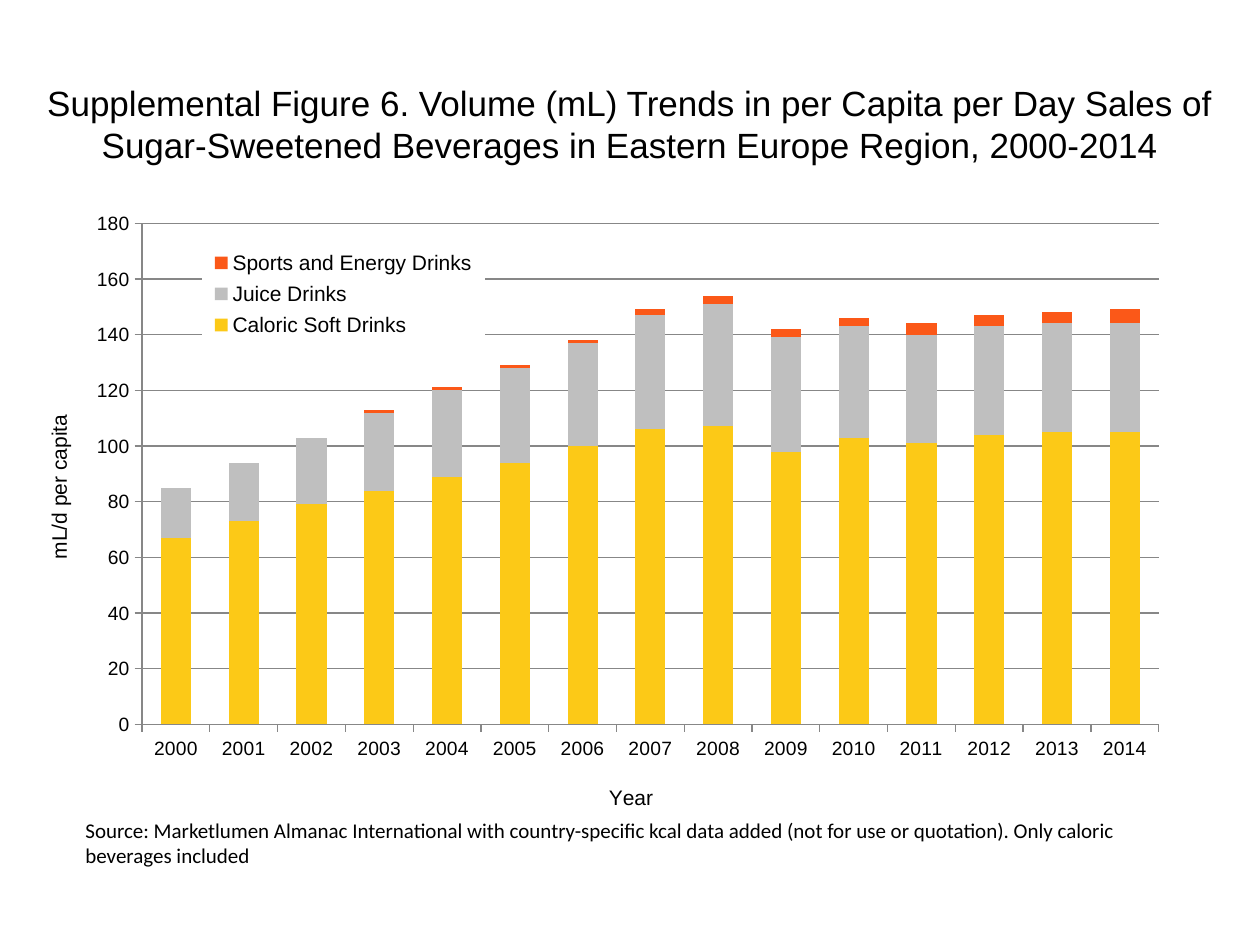
from lxml import etree
from pptx import Presentation
from pptx.chart.data import CategoryChartData
from pptx.dml.color import RGBColor
from pptx.enum.chart import XL_CHART_TYPE as ChartType
from pptx.enum.chart import XL_LEGEND_POSITION as LegendSpot
from pptx.enum.chart import XL_TICK_MARK as Tick
from pptx.enum.text import MSO_ANCHOR as Anchor
from pptx.enum.text import MSO_AUTO_SIZE as AutoSize
from pptx.enum.text import PP_ALIGN as Align
from pptx.oxml import parse_xml
from pptx.oxml.ns import nsdecls, qn
from pptx.util import Inches, Pt

WIDTH, HEIGHT = 10, 7.5
TITLE_ONLY = 5
GRAY = "878787"

YEARS = [str(year) for year in range(2000, 2015)]
SERIES = [
    ("Caloric Soft Drinks", "FCC917",
     [67, 73, 79, 84, 89, 94, 100, 106, 107, 98, 103, 101, 104, 105, 105]),
    ("Juice Drinks", "BFBFBF",
     [18, 21, 24, 28, 31, 34, 37, 41, 44, 41, 40, 39, 39, 39, 39]),
    ("Sports and Energy Drinks", "FB5818",
     [0, 0, 0, 1, 1, 1, 1, 2, 3, 3, 3, 4, 4, 4, 5]),
]


def color(hex_text):
    return RGBColor.from_string(hex_text)


def set_font(font, size, name="Arial", fill="000000"):
    font.size, font.name, font.bold = Pt(size), name, False
    font.color.rgb = color(fill)


def write(frame, text, size, name="Arial", align=None, anchor=None):
    """Put one formatted paragraph in a text frame."""
    frame.word_wrap = True
    if anchor is not None:
        frame.vertical_anchor = anchor
    para = frame.paragraphs[0]
    if align is not None:
        para.alignment = align
    span = para.add_run()
    span.text = text
    set_font(span.font, size, name)


def set_layout(element, x, y, width=None, height=None, inner=False):
    """Place a chart part at shares of the chart's size."""
    layout = element.find(qn("c:layout"))
    if layout is None:
        layout = etree.Element(qn("c:layout"))
        element.insert(0, layout)
    manual = etree.SubElement(layout, qn("c:manualLayout"))
    settings = [("layoutTarget", "inner" if inner else None),
                ("xMode", "edge"), ("yMode", "edge"),
                ("x", x), ("y", y), ("w", width), ("h", height)]
    for tag, value in settings:
        if value is not None:
            etree.SubElement(manual, qn("c:" + tag)).set("val", str(value))


def format_axis(axis, title, x, y, rotation=0):
    axis.major_tick_mark, axis.minor_tick_mark = Tick.OUTSIDE, Tick.NONE
    axis.format.line.color.rgb = color(GRAY)
    set_font(axis.tick_labels.font, 11)
    frame = axis.axis_title.text_frame
    write(frame, title, 12)
    set_layout(axis.axis_title._element, x, y)
    body = axis.axis_title._element.find(".//" + qn("a:bodyPr"))
    body.set("rot", str(rotation * 60000))
    body.set("vert", "horz")


def format_legend(chart):
    chart.has_legend = True
    legend = chart.legend
    legend.position = LegendSpot.RIGHT
    legend.include_in_layout = False
    set_layout(legend._element, 0.165, 0.168, 0.221, 0.135)
    # White ground hides the gridlines behind the legend
    legend._element.append(parse_xml(
        f'<c:spPr {nsdecls("c", "a")}><a:solidFill>'
        '<a:srgbClr val="FFFFFF"/></a:solidFill></c:spPr>'))
    set_font(legend.font, 12)


def add_sales_chart(page):
    data = CategoryChartData(number_format="#,##0")
    data.categories = YEARS
    for name, _, values in SERIES:
        data.add_series(name, values)
    chart = page.shapes.add_chart(
        ChartType.COLUMN_STACKED, Inches(-0.07), Inches(0.92),
        Inches(10.15), Inches(6), data).chart
    chart.has_title = False
    set_font(chart.font, 10, "Calibri")

    # Columns
    plot = chart.plots[0]
    plot.gap_width, plot.overlap, plot.vary_by_categories = 125, 100, False
    for series, (_, fill, _) in zip(plot.series, SERIES):
        series.format.fill.solid()
        series.format.fill.fore_color.rgb = color(fill)
    plot_area = chart._chartSpace.find(".//" + qn("c:plotArea"))
    set_layout(plot_area, 0.118, 0.142, 0.795, 0.663, inner=True)

    # Axes
    format_axis(chart.category_axis, "Year", 0.48, 0.88)
    values = chart.value_axis
    format_axis(values, "mL/d per capita", 0.04, 0.39, rotation=-90)
    values.minimum_scale, values.maximum_scale = 0, 180
    values.major_unit = 20
    values.tick_labels.number_format = "#,##0"
    values.tick_labels.number_format_is_linked = False
    values.major_gridlines.format.line.color.rgb = color(GRAY)

    format_legend(chart)


def add_title(page, text):
    title = page.shapes.title
    title.left, title.top = 0, Inches(0.41)
    title.width, title.height = Inches(WIDTH), Inches(1.14)
    title.text_frame.auto_size = AutoSize.NONE
    write(title.text_frame, text, 20, align=Align.CENTER, anchor=Anchor.MIDDLE)


def add_source(page, text):
    box = page.shapes.add_textbox(
        Inches(0.58), Inches(6.44), Inches(9), Inches(0.5))
    box.text_frame.auto_size = AutoSize.SHAPE_TO_FIT_TEXT
    write(box.text_frame, text, 12, "Calibri")


def main():
    deck = Presentation()
    deck.slide_width, deck.slide_height = Inches(WIDTH), Inches(HEIGHT)
    page = deck.slides.add_slide(deck.slide_layouts[TITLE_ONLY])
    add_sales_chart(page)
    add_title(page, "Supplemental Figure 6. Volume (mL) Trends in per Capita "
                    "per Day Sales of Sugar-Sweetened Beverages in Eastern "
                    "Europe Region, 2000-2014")
    add_source(page, "Source: Marketlumen Almanac International with "
                     "country-specific kcal data added (not for use or "
                     "quotation). Only caloric beverages included")
    deck.save("out.pptx")


if __name__ == "__main__":
    main()
